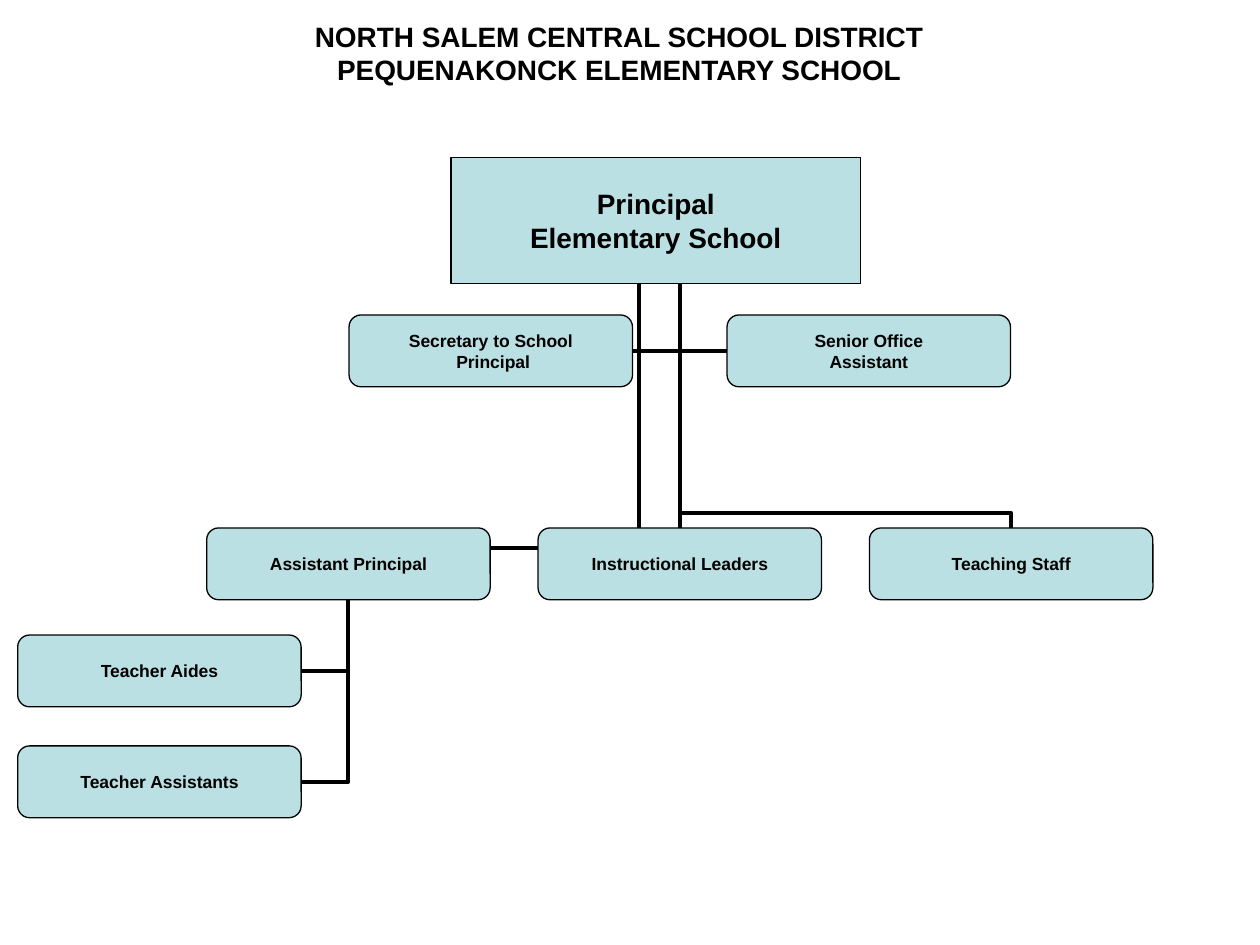
from dataclasses import dataclass

from lxml.etree import SubElement
from pptx import Presentation
from pptx.dml.color import RGBColor
from pptx.enum.shapes import MSO_CONNECTOR as Connector, MSO_SHAPE as Shape
from pptx.enum.text import MSO_ANCHOR as Anchor, PP_ALIGN as Align
from pptx.oxml.ns import qn
from pptx.util import Inches, Pt


@dataclass(frozen=True)
class Theme:
    ink: RGBColor = RGBColor(0, 0, 0)
    box: RGBColor = RGBColor(0xBB, 0xE0, 0xE3)
    font: str = "Arial"
    heading: int = 16
    label: int = 10
    border: float = 0.75
    link: float = 2.25


THEME = Theme()
TOP = 0
BOX_WIDTH, BOX_HEIGHT, GAP = 2.25, 0.57, 0.38


def write_lines(shape, lines, size):
    frame = shape.text_frame
    frame_format = {"word_wrap": True, "vertical_anchor": Anchor.MIDDLE,
                    "margin_left": 0, "margin_right": 0,
                    "margin_top": 0, "margin_bottom": 0}
    for name, value in frame_format.items():
        setattr(frame, name, value)
    font_format = {"name": THEME.font, "size": Pt(size), "bold": True}
    for index, line in enumerate(lines):
        paragraph = frame.add_paragraph() if index else frame.paragraphs[0]
        paragraph.alignment = Align.CENTER
        run = paragraph.add_run()
        run.text = line
        for name, value in font_format.items():
            setattr(run.font, name, value)
        run.font.color.rgb = THEME.ink


def add_title(slide, left, top, width, height, lines):
    title = slide.shapes.add_textbox(*map(Inches, (left, top, width, height)))
    write_lines(title, lines, THEME.heading)


def add_box(slide, left, top, lines, width=BOX_WIDTH, height=BOX_HEIGHT,
            kind=Shape.ROUNDED_RECTANGLE, size=THEME.label):
    box = slide.shapes.add_shape(kind, *map(Inches, (left, top, width, height)))
    box.shadow.inherit = False
    box.fill.solid()
    box.fill.fore_color.rgb = THEME.box
    box.line.color.rgb = THEME.ink
    box.line.width = Pt(THEME.border)
    write_lines(box, lines, size)
    return box


def add_link(slide, start, end, kind=Connector.STRAIGHT):
    link = slide.shapes.add_connector(kind, *map(Inches, (*start, *end)))
    link.line.color.rgb = THEME.ink
    link.line.width = Pt(THEME.link)
    SubElement(link._element.spPr, qn("a:effectLst"))
    return link


def add_corner(slide, start, end):
    link = add_link(slide, start, end, Connector.ELBOW)
    link._element.spPr.find(qn("a:prstGeom")).set("prst", "bentConnector2")


def add_rising_step(slide, start, end, rise):
    center_x, center_y = (start[0] + end[0]) / 2, (start[1] + end[1]) / 2
    half_run, half_rise = (start[0] - end[0]) / 2, (start[1] - end[1]) / 2
    link = add_link(slide, (center_x + half_rise, center_y - half_run),
                    (center_x - half_rise, center_y + half_run),
                    Connector.ELBOW)
    properties = link._element.spPr
    properties.find(qn("a:xfrm")).set("rot", str(90 * 60000))
    geometry = properties.find(qn("a:prstGeom"))
    guides = geometry.find(qn("a:avLst"))
    if guides is None:
        guides = SubElement(geometry, qn("a:avLst"))
    share = round(rise / (2 * half_rise) * 100000)
    SubElement(guides, qn("a:gd"), name="adj1", fmla=f"val {share}")


def add_chart_tree(slide, left, top):
    step = BOX_WIDTH + GAP
    office_top, staff_top, aide_top = top + 1.25, top + 2.94, top + 3.79
    aide_step, office_step = 0.88, 3
    staff_left, office_left = left + 1.5, left + step
    half_width, half_height = BOX_WIDTH / 2, BOX_HEIGHT / 2
    trunk = staff_left + step + half_width
    root = (trunk, top + 0.96)
    stem = (staff_left + half_width, staff_top + BOX_HEIGHT)
    aides = [(aide_top + index * aide_step, name) for index, name
             in enumerate(("Teacher Aides", "Teacher Assistants"))]
    office_middle = office_top + half_height

    for aide_row, name in aides:
        add_corner(slide, (left + BOX_WIDTH, aide_row + half_height), stem)
    for office_side in (office_left + office_step, office_left + BOX_WIDTH):
        add_corner(slide, (office_side, office_middle), root)
    add_rising_step(slide, (trunk + step, staff_top), root, 0.12)
    add_corner(slide, (staff_left + BOX_WIDTH, staff_top + 0.16),
               (trunk - 0.32, root[1]))

    names = ("Assistant Principal", "Instructional Leaders", "Teaching Staff")
    assistant, leaders, teachers = [
        add_box(slide, staff_left + index * step, staff_top, [name])
        for index, name in enumerate(names)]
    offices = (["Secretary to School", " Principal"],
               ["Senior Office", "Assistant"])
    for index, lines in enumerate(offices):
        add_box(slide, office_left + index * office_step, office_top, lines)
    for aide_row, name in aides:
        add_box(slide, left, aide_row, [name])
    trunk_link = add_link(slide, (trunk, staff_top), root)
    trunk_link.begin_connect(leaders, TOP)
    add_box(slide, left + 3.44, top, ["Principal", "Elementary School"],
            3.25, 1, Shape.RECTANGLE, THEME.heading)


def main():
    presentation = Presentation()
    presentation.slide_width = Inches(10)
    presentation.slide_height = Inches(7.5)
    slide = presentation.slides.add_slide(presentation.slide_layouts[6])
    add_title(slide, 0, 0.13, 9.83, 0.58,
              ["NORTH SALEM CENTRAL SCHOOL DISTRICT",
               "PEQUENAKONCK ELEMENTARY SCHOOL"])
    add_chart_tree(slide, 0.14, 1.25)
    presentation.save("out.pptx")


if __name__ == "__main__":
    main()
